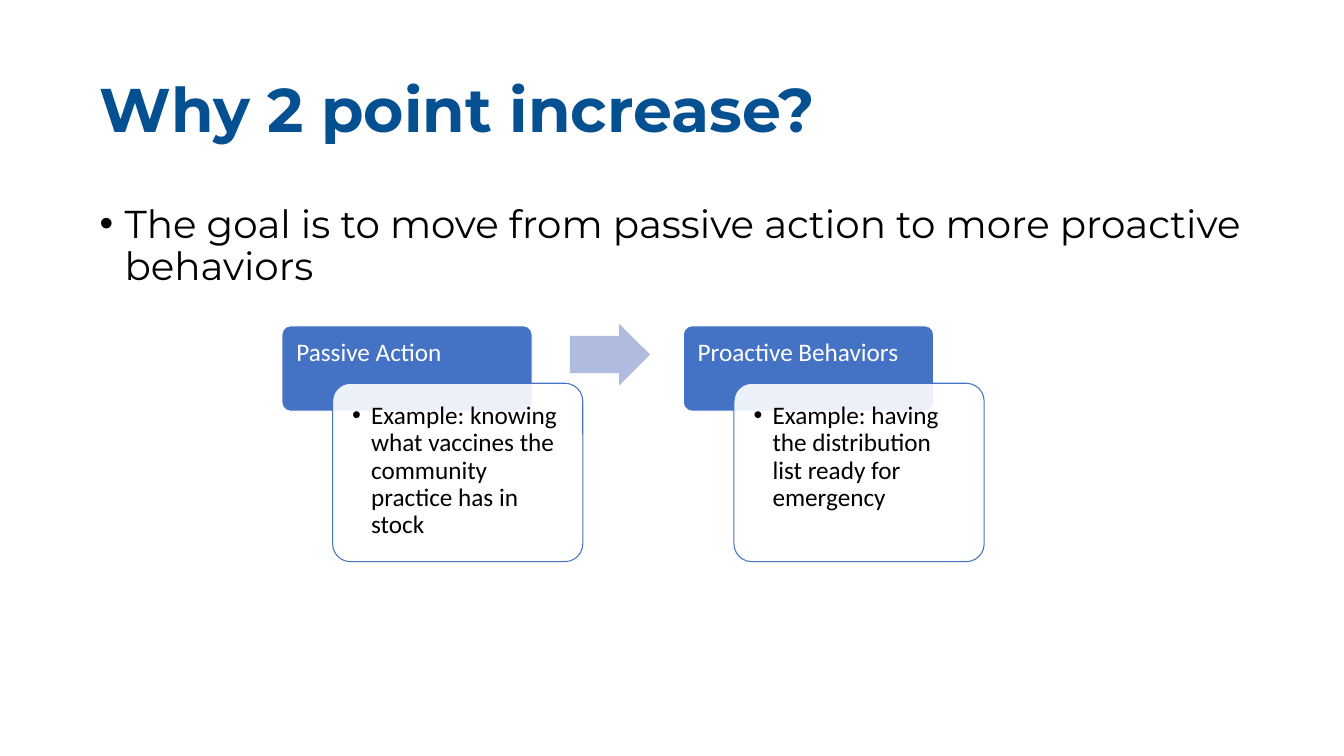
from dataclasses import dataclass

from lxml import etree
from pptx import Presentation
from pptx.dml.color import RGBColor
from pptx.enum.shapes import MSO_SHAPE
from pptx.enum.text import MSO_ANCHOR, PP_ALIGN
from pptx.oxml.ns import qn
from pptx.util import Inches, Pt

ROUND = MSO_SHAPE.ROUNDED_RECTANGLE
ARROW = MSO_SHAPE.RIGHT_ARROW
TOP, MIDDLE = MSO_ANCHOR.TOP, MSO_ANCHOR.MIDDLE
LEFT = PP_ALIGN.LEFT


@dataclass(frozen=True)
class Theme:
    navy: str = "045091"
    blue: str = "4472C4"
    pale: str = "B0BCDE"
    white: str = "FFFFFF"
    black: str = "000000"
    head: str = "Montserrat"
    body: str = "Calibri"
    title: float = 58.7
    goal: float = 37
    label: float = 24


class Deck:
    def __init__(self, theme, slide):
        self.theme = theme
        self.slide = slide

    def text(self, box, words, font, size, color, bold=False, anchor=TOP,
             pad=(0.1, 0.05, 0.1, 0.05), hang=0):
        shape = self.slide.shapes.add_textbox(*map(Inches, box))
        frame = shape.text_frame
        frame.word_wrap = True
        frame.vertical_anchor = anchor
        (frame.margin_left, frame.margin_top,
         frame.margin_right, frame.margin_bottom) = map(Inches, pad)
        para = frame.paragraphs[0]
        para.alignment = LEFT
        para.line_spacing = 0.9
        if hang:
            self.bullet(para, hang)
        run = para.add_run()
        run.text = words
        run.font.name = font
        run.font.size = Pt(size)
        run.font.bold = bold
        run.font.color.rgb = RGBColor.from_string(color)

    def bullet(self, para, hang):
        props = para._p.get_or_add_pPr()
        props.set("marL", str(Inches(hang)))
        props.set("indent", str(-Inches(hang)))
        etree.SubElement(props, qn("a:buFont")).set("typeface", "Arial")
        etree.SubElement(props, qn("a:buChar")).set("char", "•")

    def shape(self, kind, box, fill, line=None, adjust=(0.1,), alpha=None):
        shape = self.slide.shapes.add_shape(kind, *map(Inches, box))
        shape.shadow.inherit = False
        for i, value in enumerate(adjust):
            shape.adjustments[i] = value
        shape.fill.solid()
        shape.fill.fore_color.rgb = RGBColor.from_string(fill)
        if alpha:
            color = shape._element.spPr.find(".//" + qn("a:srgbClr"))
            etree.SubElement(color, qn("a:alpha")).set("val", str(alpha * 1000))
        if line:
            shape.line.color.rgb = RGBColor.from_string(line)
            shape.line.width = Pt(1)
        else:
            shape.line.fill.background()

    def step(self, left, label, example):
        t = self.theme
        top, wide = 4.31, 3.31
        # Heading block
        self.shape(ROUND, (left, top, wide, 1.13), t.blue, t.white)
        self.text((left, top, wide, 0.76), label, t.body, t.label, t.white,
                  pad=(0.19, 0.19, 0.19, 0.1))
        # Example card, set in and down from the heading
        x, y, tall, gap = left + 0.67, top + 0.76, 2.36, 0.07
        self.shape(ROUND, (x, y, wide, tall), t.white, t.blue, alpha=90)
        self.text((x + gap, y + gap, wide - 2 * gap, tall - 2 * gap), example,
                  t.body, t.label, t.black, pad=(0.19,) * 4, hang=0.25)


def main():
    show = Presentation()
    show.slide_width, show.slide_height = Inches(17.78), Inches(10)
    theme = Theme()
    deck = Deck(theme, show.slides.add_slide(show.slide_layouts[6]))

    # Title and goal
    deck.text((1.22, 0.53, 15.33, 1.93), "Why 2 point increase?", theme.head,
              theme.title, theme.navy, bold=True, anchor=MIDDLE)
    deck.text((1.22, 2.66, 15.33, 1.2),
              "The goal is to move from passive action to more proactive behaviors",
              theme.head, theme.goal, theme.black, hang=0.33)

    # Two steps joined by an arrow
    steps = (
        ("Passive Action",
         "Example: knowing what vaccines the community practice has in stock"),
        ("Proactive Behaviors",
         "Example: having the distribution list ready for emergency"),
    )
    for i, (label, example) in enumerate(steps):
        deck.step(3.73 + 5.31 * i, label, example)
    deck.shape(ARROW, (7.54, 4.28, 1.06, 0.82), theme.pale, adjust=(0.6, 0.5))

    show.save("out.pptx")


if __name__ == "__main__":
    main()
